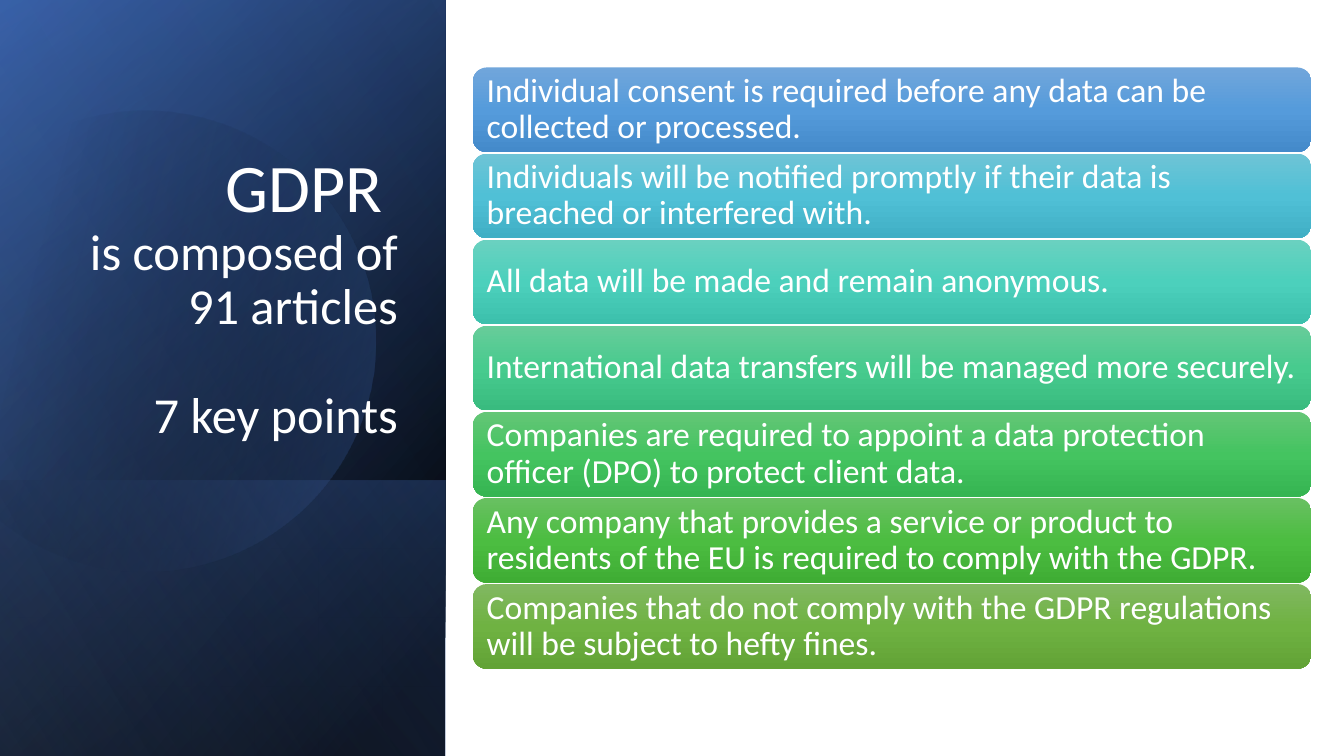
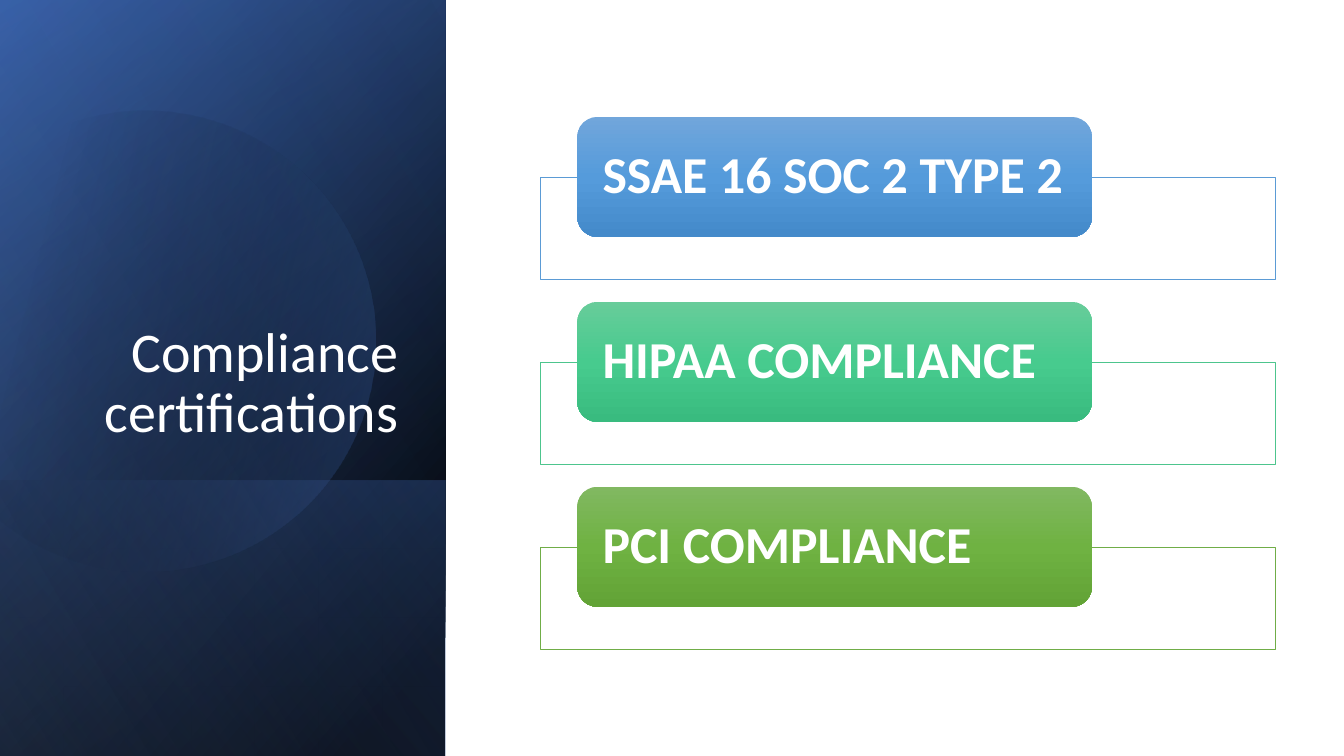
import math

from lxml import etree
from pptx import Presentation
from pptx.dml.color import RGBColor
from pptx.enum.shapes import MSO_SHAPE
from pptx.enum.text import MSO_ANCHOR, MSO_AUTO_SIZE, PP_ALIGN
from pptx.oxml.ns import qn
from pptx.util import Pt

RECT, ROUND = MSO_SHAPE.RECTANGLE, MSO_SHAPE.ROUNDED_RECTANGLE
LEFT, RIGHT = PP_ALIGN.LEFT, PP_ALIGN.RIGHT
MIDDLE, BOTTOM = MSO_ANCHOR.MIDDLE, MSO_ANCHOR.BOTTOM
FIT_NONE = MSO_AUTO_SIZE.NONE

FONT, WHITE, BLACK = "Calibri", "FFFFFF", "000000"
BLUE, NAVY, PALE = "4472C4", "2F5597", "8FAADC"
WIDE, HIGH = 960, 540
SIDE = 318.2  # width of the dark side panel

# Gradient stops are (position %, colour, opacity %).
BASE = [(8, BLACK, 100), (100, NAVY, 100)]
GLOW = [(0, BLACK, 0), (99, BLUE, 46)]
FOOT = [(2, BLUE, 29), (100, BLACK, 30)]
DISC = [(29, BLACK, 0), (100, BLUE, 43)]
VEIL = [(0, BLACK, 0), (99, PALE, 11)]

SKY = ("71A6DB", "559BDB", "448ACA")
MINT = ("67CC9A", "47CB8E", "39BB7F")
OLIVE = ("81B861", "6FB242", "62A336")

# Title lines are (text, size, space before).
GDPR = [("GDPR ", 48.6, 0), ("is composed of 91 articles", 36, 0),
        ("7 key points", 36, 39)]
CERTS = [("Compliance certifications", 40, 0)]

POINTS = [
    ("Individual consent is required before any data can be collected or "
     "processed.", SKY),
    ("Individuals will be notified promptly if their data is breached or "
     "interfered with.", ("6EC4D6", "50C0D6", "40AFC5")),
    ("All data will be made and remain anonymous.",
     ("6AD1C0", "4CD0BC", "3CC0AC")),
    ("International data transfers will be managed more securely.", MINT),
    ("Companies are required to appoint a data protection officer (DPO) to "
     "protect client data.", ("64C677", "44C460", "36B552")),
    ("Any company that provides a service or product to residents of the EU "
     "is required to comply with the GDPR.", ("69C062", "4CBD41", "3FAD34")),
    ("Companies that do not comply with the GDPR regulations will be subject "
     "to hefty fines.", OLIVE),
]
LABELS = [
    ("SSAE 16 SOC 2 TYPE 2", SKY, "5B9BD5"),
    ("HIPAA COMPLIANCE", MINT, "4DC58D"),
    ("PCI COMPLIANCE", OLIVE, "70AD47"),
]


def rgb(code):
    return RGBColor.from_string(code)


def shade(shape, stops, angle):
    """Give the shape a linear gradient and no line or shadow."""
    shape.shadow.inherit = False
    shape.line.fill.background()
    shape.fill.background()
    props = shape._element.spPr
    grad = etree.Element(qn("a:gradFill"), rotWithShape="1")
    row = etree.SubElement(grad, qn("a:gsLst"))
    for pos, code, alpha in stops:
        stop = etree.SubElement(row, qn("a:gs"), pos=str(pos * 1000))
        tint = etree.SubElement(stop, qn("a:srgbClr"), val=code)
        if alpha < 100:
            etree.SubElement(tint, qn("a:alpha"), val=str(alpha * 1000))
    etree.SubElement(grad, qn("a:lin"), ang=str(angle * 60000), scaled="0")
    props.replace(props.find(qn("a:noFill")), grad)


def style(para, size, align, bold=False):
    para.alignment = align
    para.line_spacing = 0.9
    font = para.font
    font.name, font.size, font.bold = FONT, Pt(size), bold
    font.color.rgb = rgb(WHITE)


def box(slide, kind, x, y, w, h):
    return slide.shapes.add_shape(kind, Pt(x), Pt(y), Pt(w), Pt(h))


def band(slide, top, stops, angle):
    """Fill the side panel from top down with a mirrored quarter-turned box."""
    tall = HIGH - top
    shift = (SIDE - tall) / 2
    shape = box(slide, RECT, shift, top - shift, tall, SIDE)
    shape.rotation = 90
    shape._element.spPr.find(qn("a:xfrm")).set("flipH", "1")
    shade(shape, stops, angle)


def disc(slide):
    """Draw a tilted circle as one arc, cut upright near the slide edge."""
    x, y, w, r = -39.6, 76.3, 307.4, 164.5
    tilt, half = 16.1, 133.8
    first = math.radians(tilt - half)
    begin = Pt(x + w - r + r * math.cos(first)), Pt(y + r + r * math.sin(first))
    build = slide.shapes.build_freeform(*begin)
    build.add_line_segments(
        [(Pt(a), Pt(b)) for a in (x, x + w) for b in (y, y + 2 * r)])
    shape = build.convert_to_shape()
    shape.rotation = 360 - tilt

    route = next(shape._element.iter(qn("a:path")))
    for line in route.findall(qn("a:lnTo")):
        route.remove(line)
    for old in route.findall(qn("a:close")):
        route.remove(old)
    etree.SubElement(
        route, qn("a:arcTo"), wR=str(Pt(r)), hR=str(Pt(r)),
        stAng=str(round((360 + tilt - half) * 60000)),
        swAng=str(round(2 * half * 60000)))
    etree.SubElement(route, qn("a:close"))
    shade(shape, DISC, 30)


def start(deck, lines):
    """Add a slide with the side panel and its title."""
    slide = deck.slides.add_slide(deck.slide_layouts[5])
    band(slide, 0, BASE, 50)
    band(slide, 0, GLOW, 30)
    band(slide, 343, FOOT, 130)
    disc(slide)
    band(slide, 0, VEIL, 120)

    title = slide.shapes.title
    title.left, title.top = Pt(46), Pt(132.7)
    title.width, title.height = Pt(245.5), Pt(188.6)
    frame = title.text_frame
    frame.text = "\n".join(text for text, _, _ in lines)
    frame.word_wrap, frame.auto_size = True, FIT_NONE
    frame.vertical_anchor = BOTTOM
    for para, (_, size, gap) in zip(frame.paragraphs, lines):
        style(para, size, RIGHT)
        para.space_before = Pt(gap)
    slide.shapes._spTree.append(title._element)
    return slide


def pill(slide, area, text, tones, size, inset, bold=False):
    shape = box(slide, ROUND, *area)
    shade(shape, [(50 * i, tone, 100) for i, tone in enumerate(tones)], 90)
    frame = shape.text_frame
    frame.text = text
    frame.word_wrap, frame.vertical_anchor = True, MIDDLE
    frame.margin_left = frame.margin_right = Pt(inset)
    frame.margin_top = frame.margin_bottom = 0
    style(frame.paragraphs[0], size, LEFT, bold)


def main():
    deck = Presentation()
    deck.slide_width, deck.slide_height = Pt(WIDE), Pt(HIGH)

    slide = start(deck, GDPR)
    for i, (text, tones) in enumerate(POINTS):
        pill(slide, (337.7, 48.2 + 61.5 * i, 599, 60.5), text, tones, 24, 7)

    slide = start(deck, CERTS)
    for i, (text, tones, edge) in enumerate(LABELS):
        y = 83.5 + 132.1 * i
        frame = box(slide, RECT, 386, y + 43.2, 525, 73.1)
        frame.shadow.inherit = False
        frame.fill.solid()
        frame.fill.fore_color.rgb = rgb(WHITE)
        frame.line.color.rgb = rgb(edge)
        frame.line.width = Pt(0.5)
        pill(slide, (412.4, y, 367.5, 85.7), text, tones, 37, 13.8, True)

    deck.save("out.pptx")


if __name__ == "__main__":
    main()
